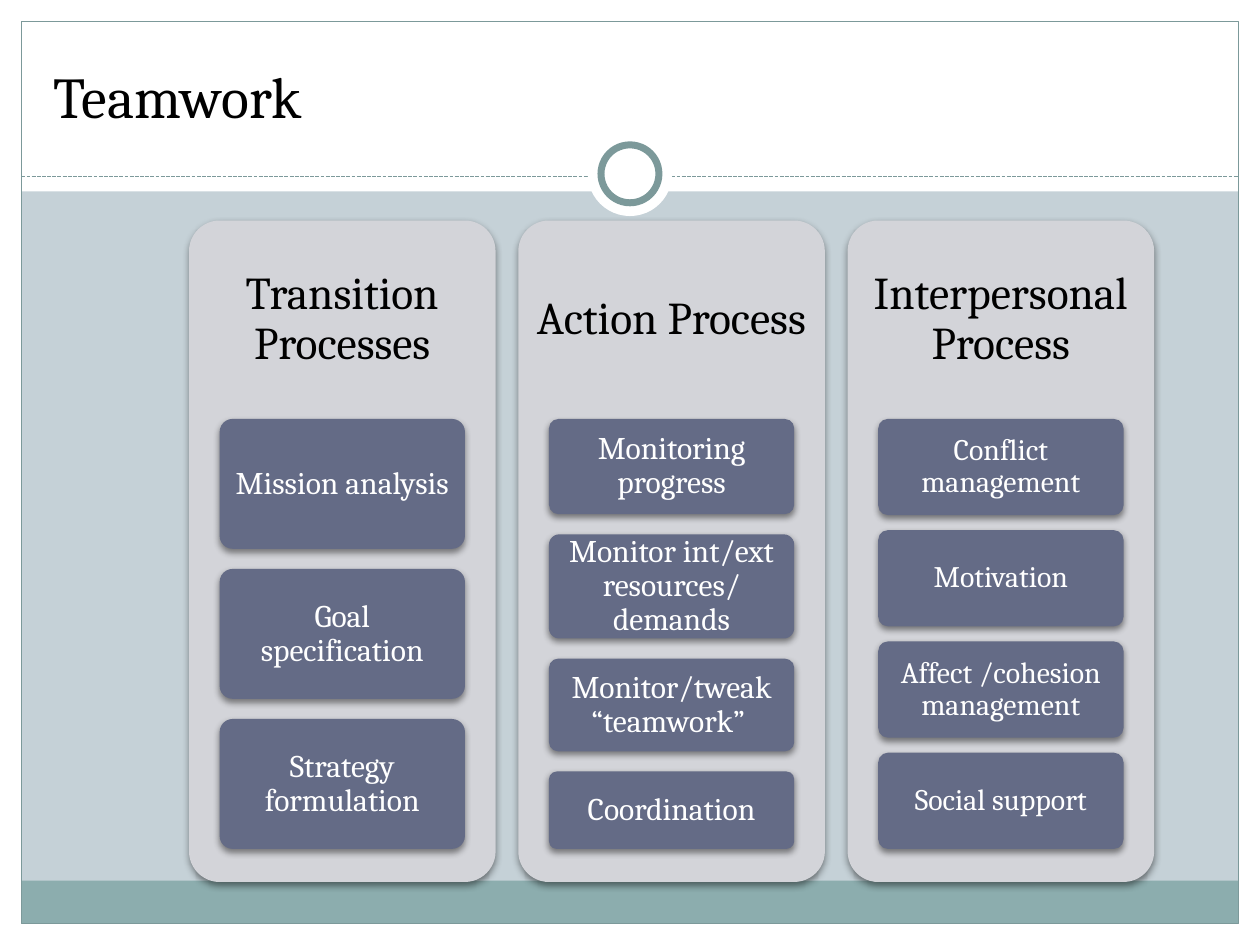
import pptx
import pptx.util
import pptx.dml.color
import pptx.oxml
import pptx.oxml.ns
from pptx.enum.dml import MSO_LINE
from pptx.enum.shapes import MSO_CONNECTOR, MSO_SHAPE
from pptx.enum.text import MSO_ANCHOR, PP_ALIGN

WIDTH, HEIGHT, MARGIN = 10, 7.5, 0.17
WHITE, BLACK, TEAL, SAGE = "FFFFFF", "000000", "7C999A", "8CADAE"
SKY, PANEL, CARD = "C5D1D7", "D3D4D9", "646B86"
PROCESSES = [
    ("Transition Processes", 18, 0.16,
     [("Mission analysis", 1), ("Goal specification", 1), ("Strategy formulation", 1)]),
    ("Action Process", 18, 0.16,
     [("Monitoring progress", 0.75), ("Monitor int/ext resources/ demands", 0.82),
      ("Monitor/tweak “teamwork” ", 0.73), ("Coordination", 0.61)]),
    ("Interpersonal Process", 17, 0.12,
     [("Conflict management", 1), ("Motivation", 1),
      ("Affect /cohesion management", 1), ("Social support", 1)]),
]


def color(value):
    """Turn a hex string into a colour."""
    return pptx.dml.color.RGBColor.from_string(value)


def inches(*lengths):
    """Convert lengths in inches to slide units."""
    return [pptx.util.Inches(length) for length in lengths]


def add_block(slide, box, fill=None, line=None, weight=0.75, kind=MSO_SHAPE.RECTANGLE):
    """Add a preset shape without shadow."""
    block = slide.shapes.add_shape(kind, *inches(*box))
    block.shadow.inherit = False
    if fill:
        block.fill.solid()
        block.fill.fore_color.rgb = color(fill)
    else:
        block.fill.background()
    if line:
        block.line.color.rgb = color(line)
        block.line.width = pptx.util.Pt(weight)
    else:
        block.line.fill.background()
    return block


def add_raised_block(slide, box, fill):
    """Add a rounded block with a soft shadow below it."""
    block = add_block(slide, box, fill, kind=MSO_SHAPE.ROUNDED_RECTANGLE)
    block.adjustments[0] = 0.1
    effects = block._element.spPr.find(pptx.oxml.ns.qn("a:effectLst"))
    effects.append(pptx.oxml.parse_xml(
        f'<a:outerShdw {pptx.oxml.ns.nsdecls("a")} blurRad="50800" dist="25400" '
        'dir="5400000" rotWithShape="0"><a:srgbClr val="000000">'
        '<a:alpha val="45000"/></a:srgbClr></a:outerShdw>'))
    return block


def write(shape, text, size, ink, insets=(0.1, 0.05), anchor=MSO_ANCHOR.MIDDLE,
          align=PP_ALIGN.CENTER, spacing=0.9):
    """Write one paragraph into a shape."""
    frame = shape.text_frame
    frame.word_wrap = True
    frame.vertical_anchor = anchor
    frame.margin_left = frame.margin_right = pptx.util.Inches(insets[0])
    frame.margin_top = frame.margin_bottom = pptx.util.Inches(insets[1])
    paragraph = frame.paragraphs[0]
    paragraph.text = text
    paragraph.alignment = align
    paragraph.line_spacing = spacing
    paragraph.font.name = "Cambria"
    paragraph.font.size = pptx.util.Pt(size)
    paragraph.font.color.rgb = color(ink)


def add_ring(slide, center_x, center_y):
    """Place the ring on its white disc."""
    for diameter, line in ((0.67, None), (0.46, TEAL)):
        box = (center_x - diameter / 2, center_y - diameter / 2, diameter, diameter)
        add_block(slide, box, WHITE, line, 4, MSO_SHAPE.OVAL)


def add_frame(slide, width, height):
    """Draw the white border, header, footer band and divider."""
    right, bottom = width - MARGIN, height - MARGIN
    inner = width - 2 * MARGIN
    for box in ((0, bottom, width, MARGIN), (0, 0, width, 1.52),
                (0, 0, MARGIN, height), (right, 0, MARGIN, height)):
        add_block(slide, box, WHITE)
    add_block(slide, (MARGIN, bottom - 0.34, inner, 0.34), SAGE)
    add_block(slide, (MARGIN, MARGIN, inner, bottom - MARGIN), line=TEAL)
    divider = slide.shapes.add_connector(
        MSO_CONNECTOR.STRAIGHT, *inches(MARGIN, 1.4, right, 1.4))
    divider.line.color.rgb = color(TEAL)
    divider.line.width = pptx.util.Pt(0.75)
    divider.line.dash_style = MSO_LINE.SQUARE_DOT
    divider._element.spPr.append(pptx.oxml.parse_xml(
        f'<a:effectLst {pptx.oxml.ns.nsdecls("a")}/>'))
    add_ring(slide, width / 2, 1.38)


def add_process(slide, box, heading, size, gap, steps):
    """Place a panel with its heading and a stack of weighted cards."""
    left, top, width, height = box
    add_raised_block(slide, box, PANEL)
    title = slide.shapes.add_textbox(*inches(left, top, width, 0.3 * height))
    write(title, heading, 26, BLACK, (0.11, 0.11))
    available = 0.65 * height - gap * (len(steps) - 1)
    unit = available / sum(share for _, share in steps)
    card_top = top + 0.3 * height
    for step, share in steps:
        card_box = (left + 0.1 * width, card_top, 0.8 * width, share * unit)
        write(add_raised_block(slide, card_box, CARD), step, size, WHITE, (0.05, 0.04))
        card_top += share * unit + gap


def add_processes(slide, box, gap):
    """Set the process panels side by side."""
    left, top, width, height = box
    panel = (width - gap * (len(PROCESSES) - 1)) / len(PROCESSES)
    for column, process in enumerate(PROCESSES):
        add_process(slide, (left + column * (panel + gap), top, panel, height), *process)


def main():
    """Build and save the teamwork slide."""
    deck = pptx.Presentation()
    deck.slide_width, deck.slide_height = inches(WIDTH, HEIGHT)
    slide = deck.slides.add_slide(deck.slide_layouts[6])
    slide.background.fill.solid()
    slide.background.fill.fore_color.rgb = color(SKY)
    add_frame(slide, WIDTH, HEIGHT)
    add_processes(slide, (1.5, 1.75, 7.66, 5.25), 0.18)
    title = slide.shapes.add_textbox(*inches(0.33, 0.25, 9.33, 0.83))
    write(title, "Teamwork", 33, BLACK, anchor=MSO_ANCHOR.BOTTOM,
          align=PP_ALIGN.LEFT, spacing=1.0)
    deck.save("out.pptx")


if __name__ == "__main__":
    main()
